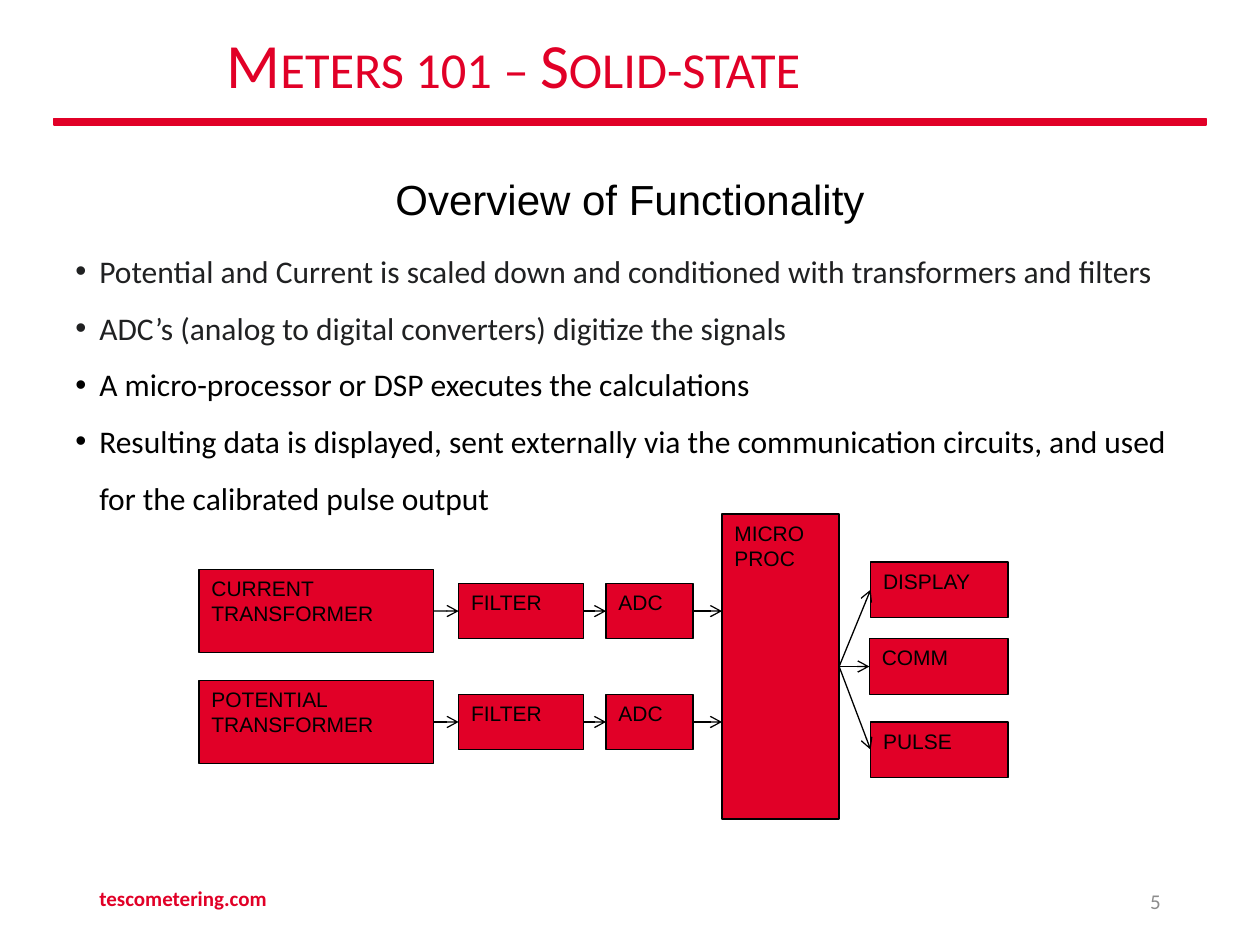
from lxml.etree import SubElement
from pptx import Presentation
from pptx.dml.color import RGBColor
from pptx.enum.shapes import MSO_CONNECTOR, MSO_SHAPE
from pptx.enum.text import MSO_ANCHOR, PP_ALIGN
from pptx.oxml.ns import qn
from pptx.util import Inches, Pt

RED = "E10027"
BLACK = "000000"
DARK = "202122"
GRAY = "8C8C8C"

BULLETS = [
    ("Potential and Current is scaled down and conditioned with transformers and filters", DARK),
    ("ADC’s (analog to digital converters) digitize the signals", DARK),
    ("A micro-processor or DSP executes the calculations", BLACK),
    ("Resulting data is displayed, sent externally via the communication circuits, "
     "and used for the calibrated pulse output", BLACK),
]
INPUT_ROWS = [("CURRENT TRANSFORMER", 4.85), ("POTENTIAL TRANSFORMER", 5.73)]
OUTPUTS = [("DISPLAY", 6.91, 4.68), ("COMM", 6.9, 5.29), ("PULSE", 6.91, 5.95)]
OUTPUT_RIGHT = 8
STAGE_HEIGHT = 0.44


def color(hex_string):
    return RGBColor.from_string(hex_string)


def style(paragraph, size, font_name, hex_color, bold=False):
    font = paragraph.font
    font.size = Pt(size)
    font.name = font_name
    font.bold = bold
    font.color.rgb = color(hex_color)


def add_text_box(slide, left, top, width, height, anchor=MSO_ANCHOR.MIDDLE):
    box = slide.shapes.add_textbox(Inches(left), Inches(top), Inches(width), Inches(height))
    box.text_frame.word_wrap = True
    box.text_frame.vertical_anchor = anchor
    return box.text_frame


def add_label(slide, place, text, size, font_name, hex_color,
              align=PP_ALIGN.LEFT, bold=False, anchor=MSO_ANCHOR.MIDDLE):
    paragraph = add_text_box(slide, *place, anchor).paragraphs[0]
    paragraph.text = text
    paragraph.alignment = align
    style(paragraph, size, font_name, hex_color, bold)
    return paragraph


def add_title(slide):
    paragraph = add_label(slide, (1.7, 0.17, 7.88, 0.74), "Meters 101 – Solid-state",
                          36, "Calibri", RED)
    paragraph.line_spacing = 0.9
    paragraph.runs[0]._r.get_or_add_rPr().set("cap", "small")


def add_bullets(slide):
    frame = add_text_box(slide, 0.5, 1.8, 9, 2.56, MSO_ANCHOR.TOP)
    for index, (text, hex_color) in enumerate(BULLETS):
        paragraph = frame.add_paragraph() if index else frame.paragraphs[0]
        paragraph.text = text
        paragraph.line_spacing = 1.5
        properties = paragraph._p.get_or_add_pPr()
        properties.set("marL", str(Inches(0.19)))
        properties.set("indent", str(Inches(-0.19)))
        SubElement(properties, qn("a:buFont"), typeface="Arial")
        SubElement(properties, qn("a:buChar"), char="•")
        style(paragraph, 18, "Calibri", hex_color)


def add_rectangle(slide, left, top, width, height, line_color, line_width):
    shape = slide.shapes.add_shape(MSO_SHAPE.RECTANGLE, Inches(left), Inches(top),
                                   Inches(width), Inches(height))
    shape.shadow.inherit = False
    shape.fill.solid()
    shape.fill.fore_color.rgb = color(RED)
    shape.line.color.rgb = color(line_color)
    shape.line.width = Pt(line_width)
    return shape


def add_block(slide, text, left, middle, width, height=STAGE_HEIGHT):
    """Add a diagram block centred vertically on middle."""
    shape = add_rectangle(slide, left, middle - height / 2, width, height, BLACK, 0.75)
    frame = shape.text_frame
    frame.word_wrap = True
    frame.vertical_anchor = MSO_ANCHOR.TOP
    frame.text = text
    for paragraph in frame.paragraphs:
        paragraph.alignment = PP_ALIGN.LEFT
        style(paragraph, 12, "Arial", BLACK)
    return shape


def add_arrow(slide, source, target, level=False):
    """Join two blocks side to side; a level arrow keeps the height of its source."""
    start_y = source.top + source.height // 2
    end_y = start_y if level else target.top + target.height // 2
    arrow = slide.shapes.add_connector(MSO_CONNECTOR.STRAIGHT, source.left + source.width,
                                       start_y, target.left, end_y)
    arrow.line.color.rgb = color(BLACK)
    arrow.line.width = Pt(0.75)
    SubElement(arrow.line._get_or_add_ln(), qn("a:tailEnd"), type="arrow")
    SubElement(arrow._element.spPr, qn("a:effectLst"))


def add_diagram(slide):
    processor = add_block(slide, "MICRO\nPROC", 5.73, 5.29, 0.93, 2.42)
    for name, middle in INPUT_ROWS:
        transformer = add_block(slide, name, 1.58, middle, 1.86, 0.66)
        signal_filter = add_block(slide, "FILTER", 3.64, middle, 0.99)
        converter = add_block(slide, "ADC", 4.81, middle, 0.69)
        add_arrow(slide, transformer, signal_filter)
        add_arrow(slide, signal_filter, converter)
        add_arrow(slide, converter, processor, level=True)
    for name, left, middle in OUTPUTS:
        output = add_block(slide, name, left, middle, OUTPUT_RIGHT - left)
        add_arrow(slide, processor, output)


def main():
    presentation = Presentation()
    presentation.slide_width = Inches(10)
    presentation.slide_height = Inches(7.5)
    slide = presentation.slides.add_slide(presentation.slide_layouts[6])

    add_rectangle(slide, 0.43, 0.94, 9.14, 0.05, RED, 1)
    add_title(slide)
    add_diagram(slide)
    add_label(slide, (2.46, 1.33, 5.08, 0.51), "Overview of Functionality", 24, "Arial",
              BLACK, PP_ALIGN.CENTER, anchor=MSO_ANCHOR.TOP)
    add_bullets(slide)
    add_label(slide, (0.69, 6.93, 3.38, 0.4), "tescometering.com", 12, "Calibri", RED, bold=True)
    add_label(slide, (7.06, 6.95, 2.25, 0.4), "5", 12, "Calibri", GRAY, PP_ALIGN.RIGHT)

    presentation.save("out.pptx")


if __name__ == "__main__":
    main()
